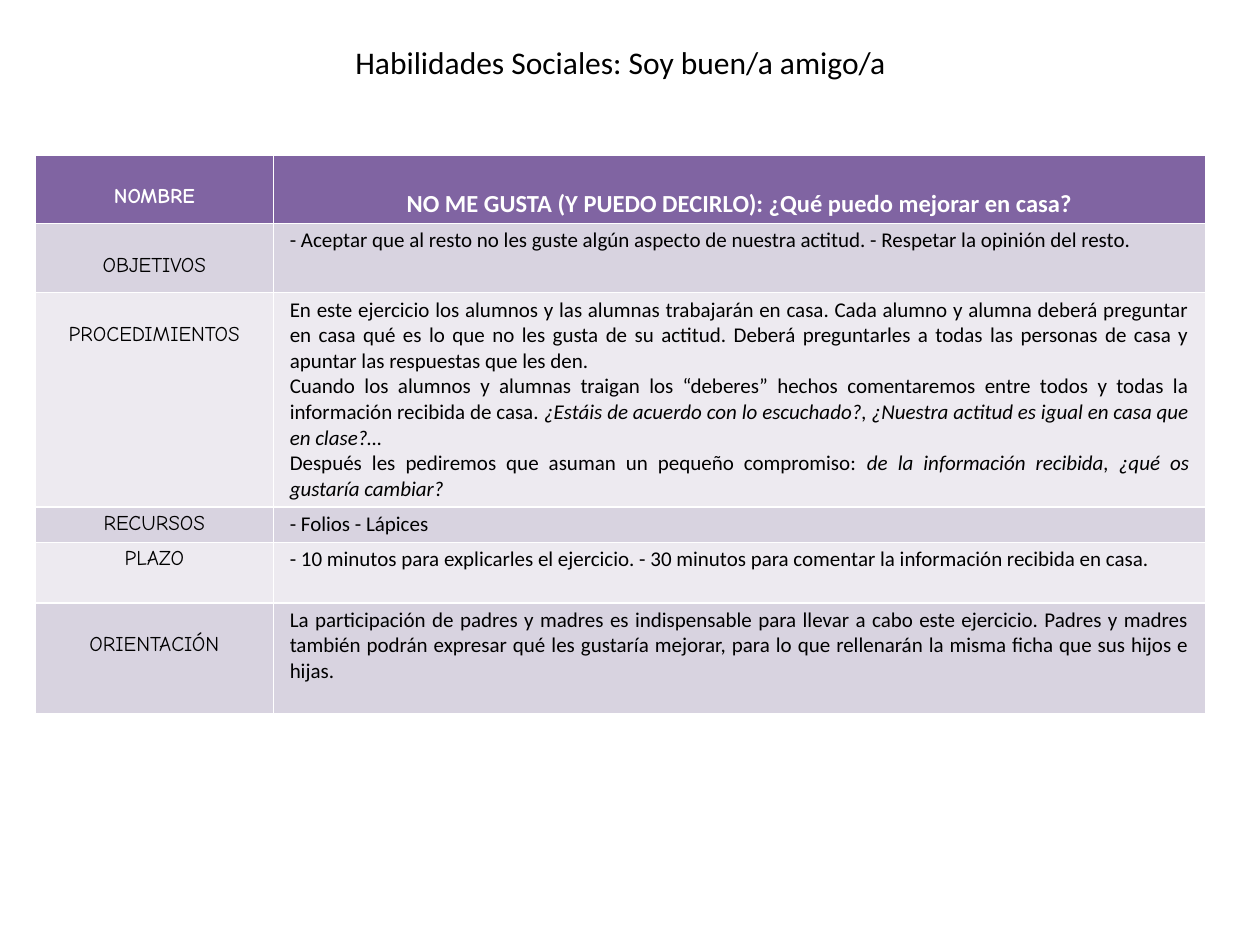
from collections import namedtuple

from pptx import Presentation
from pptx import util as u
from pptx.dml import color
from pptx.enum import text

Box = namedtuple("Box", "left top width height")

WIDTH, HEIGHT = u.Inches(10), u.Inches(7.5)
PURPLE, LILAC, PALE = "8064A2", "D8D3E0", "EDEAF0"
COLUMN_SHARES = (1.89, 7.4)
CENTER, JUSTIFY = text.PP_ALIGN.CENTER, text.PP_ALIGN.JUSTIFY

# Each row: height weight, label, label lowered by a line, paragraphs of (words, italic)
ROWS = [
    (0.54, "NOMBRE", True, [[("NO ME GUSTA (Y PUEDO DECIRLO): ¿Qué puedo mejorar en casa?", False)]]),
    (0.55, "OBJETIVOS", True, [[("- Aceptar que al resto no les guste algún aspecto de nuestra actitud. "
                                 "- Respetar la opinión del resto.", False)]]),
    (1.70, "PROCEDIMIENTOS", True, [
        [("En este ejercicio los alumnos y las alumnas trabajarán en casa. Cada alumno y alumna deberá "
          "preguntar en casa qué es lo que no les gusta de su actitud. Deberá preguntarles a todas las "
          "personas de casa y apuntar las respuestas que les den. ", False)],
        [("Cuando los alumnos y alumnas traigan los “deberes” hechos comentaremos entre todos y todas la "
          "información recibida de casa. ", False),
         ("¿Estáis de acuerdo con lo escuchado?, ¿Nuestra actitud es igual en casa que en clase?…", True)],
        [("Después les pediremos que asuman un pequeño compromiso: ", False),
         ("de la información recibida, ¿qué os gustaría cambiar?", True)],
    ]),
    (0.28, "RECURSOS", False, [[("- Folios - Lápices ", False)]]),
    (0.48, "PLAZO", False, [[("- 10 minutos para explicarles el ejercicio. "
                              "- 30 minutos para comentar la información recibida en casa. ", False)]]),
    (0.88, "ORIENTACIÓN", True, [[("La participación de padres y madres es indispensable para llevar a cabo "
                                   "este ejercicio. Padres y madres también podrán expresar qué les gustaría "
                                   "mejorar, para lo que rellenarán la misma ficha que sus hijos e hijas. ",
                                   False)]]),
]


def rgb(value):
    """Turn a hex string into a colour."""
    return color.RGBColor.from_string(value)


def share_box(left, top, width, height):
    """Return a box given as shares of the slide's size."""
    return Box(int(left * WIDTH), int(top * HEIGHT), int(width * WIDTH), int(height * HEIGHT))


def add_span(para, words, font, size, ink, bold=False, italic=False):
    """Add one formatted run to a paragraph."""
    span = para.add_run()
    span.text = words
    span.font.name, span.font.size = font, u.Pt(size)
    span.font.bold, span.font.italic = bold, italic
    span.font.color.rgb = rgb(ink)


def place_title(page, box, words):
    """Place and format the title placeholder."""
    title = page.shapes.title
    title.left, title.top, title.width, title.height = box
    frame = title.text_frame
    frame.auto_size = text.MSO_AUTO_SIZE.NONE
    frame.vertical_anchor = text.MSO_ANCHOR.TOP
    para = frame.paragraphs[0]
    para.alignment = text.PP_ALIGN.LEFT
    add_span(para, words, "Calibri", 18, "000000")


def fill_cell(cell, paragraphs, font, size, align, fill, header, lowered):
    """Fill one table cell with colour and paragraphs."""
    cell.fill.solid()
    cell.fill.fore_color.rgb = rgb(fill)
    cell.margin_left = cell.margin_right = u.Inches(0.13)
    cell.margin_top = u.Pt(2.5 + (1.22 * size if lowered else 0))
    cell.margin_bottom = u.Pt(2.5)
    frame = cell.text_frame
    for number, spans in enumerate(paragraphs):
        para = frame.add_paragraph() if number else frame.paragraphs[0]
        para.alignment = align
        for words, italic in spans:
            add_span(para, words, font, size, "FFFFFF" if header else "000000", header, italic)


def place_table(page, box, rows):
    """Place the activity sheet as a table within the box."""
    table = page.shapes.add_table(len(rows), len(COLUMN_SHARES), *box).table
    for column, share in zip(table.columns, COLUMN_SHARES):
        column.width = int(box.width * share / sum(COLUMN_SHARES))
    total = sum(row[0] for row in rows)
    for index, (weight, label, lowered, paragraphs) in enumerate(rows):
        header = index == 0
        fill = PURPLE if header else (PALE, LILAC)[index % 2]
        table.rows[index].height = int(box.height * weight / total)
        fill_cell(table.cell(index, 0), [[(label, False)]], "Comic Neue", 12, CENTER, fill, header, lowered)
        fill_cell(table.cell(index, 1), paragraphs, "Calibri", 14 if header else 12,
                  CENTER if header else JUSTIFY, fill, header, header)


def main():
    """Build and save the slide."""
    deck = Presentation()
    deck.slide_width, deck.slide_height = WIDTH, HEIGHT
    page = deck.slides.add_slide(deck.slide_layouts[5])
    place_table(page, share_box(0.028, 0.164, 0.929, 0.591), ROWS)
    place_title(page, share_box(0.272, 0.039, 0.48, 0.053), "Habilidades Sociales: Soy buen/a amigo/a")
    deck.save("out.pptx")


if __name__ == "__main__":
    main()
